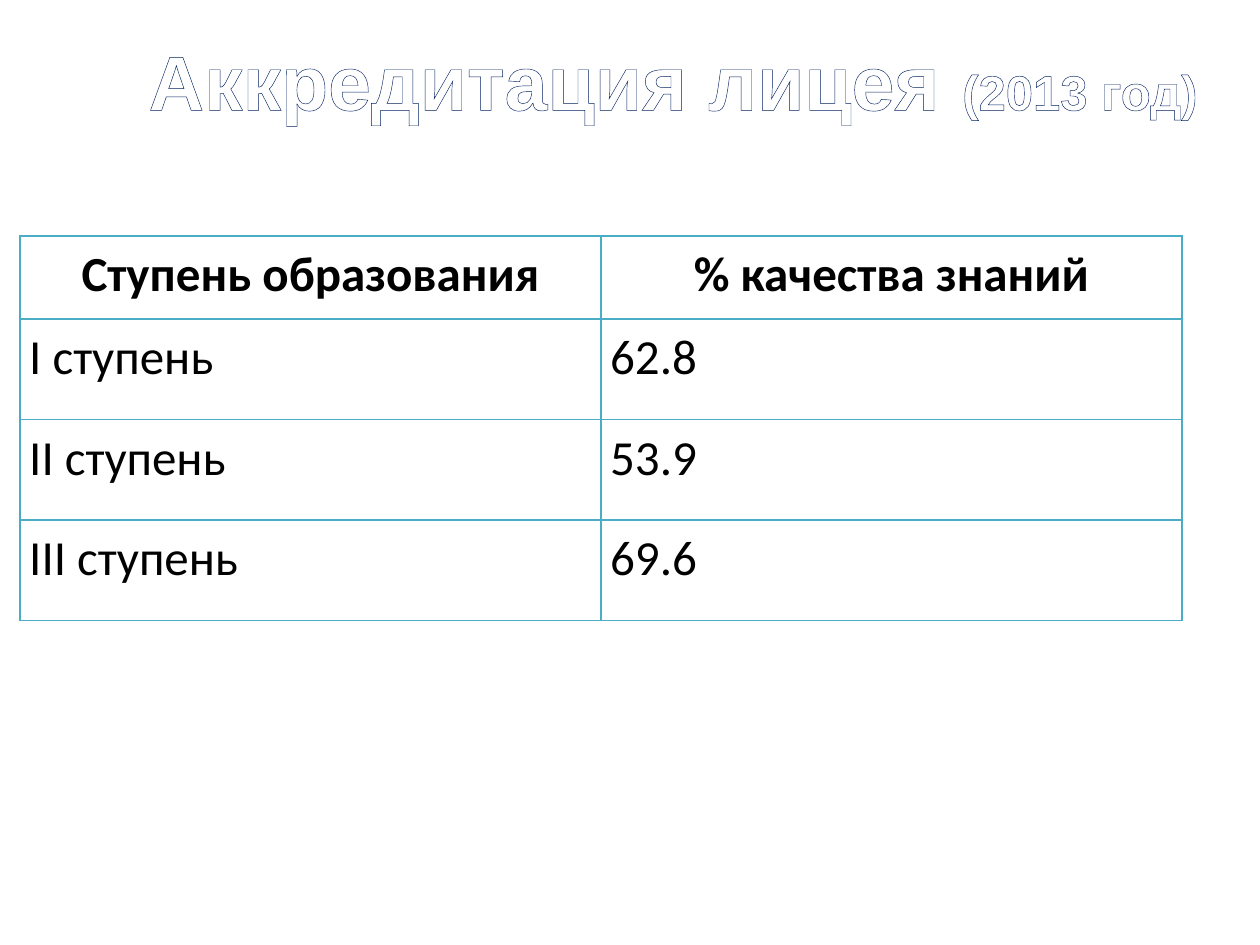
from lxml import etree
from pptx import Presentation
from pptx import util as u
from pptx.dml.color import RGBColor
from pptx.enum import text
from pptx.oxml import ns

COLORS = {"black": "000000", "white": "FFFFFF", "navy": "002060", "border": "4BACC6"}
ROWS = [
    ("Ступень образования", "% качества знаний"),
    ("I ступень", "62.8"),
    ("II ступень", "53.9"),
    ("III ступень", "69.6"),
]
TITLE = [("Аккредитация лицея ", 44), ("(2013 год)", 28)]


def style_run(run, font_name, size, color, bold):
    run.font.name = font_name
    run.font.size = u.Pt(size)
    run.font.bold = bold
    run.font.color.rgb = RGBColor.from_string(COLORS[color])


def make_line(tag, color, width):
    line = etree.Element(ns.qn(tag), w=str(u.Pt(width)))
    fill = etree.SubElement(line, ns.qn("a:solidFill"))
    etree.SubElement(fill, ns.qn("a:srgbClr"), val=COLORS[color])
    return line


def add_title(slide):
    shape = slide.shapes.add_textbox(u.Pt(77.8), u.Pt(11.5), u.Pt(622), u.Pt(90))
    frame = shape.text_frame
    frame.word_wrap = True
    frame.margin_top = u.Pt(7.6)
    paragraph = frame.paragraphs[0]
    for words, size in TITLE:
        run = paragraph.add_run()
        run.text = words
        style_run(run, "Arial", size, "white", True)
        run.font._element.insert(0, make_line("a:ln", "navy", 0.5))


def fill_cell(cell, words, is_header):
    cell.fill.background()
    cell.margin_left = cell.margin_right = u.Pt(5.4)
    cell.margin_top = cell.margin_bottom = u.Pt(0)
    cell.text_frame.text = words
    paragraph = cell.text_frame.paragraphs[0]
    paragraph.alignment = text.PP_ALIGN.CENTER if is_header else text.PP_ALIGN.JUSTIFY
    paragraph.line_spacing = 1.15
    paragraph.space_after = u.Pt(10)
    style_run(paragraph.runs[0], "Calibri", 28, "black", is_header)
    properties = cell._tc.get_or_add_tcPr()
    for index, side in enumerate(("L", "R", "T", "B")):
        properties.insert(index, make_line(f"a:ln{side}", "border", 1))


def add_grades_table(slide):
    heights = [47.6] + [57.4] * (len(ROWS) - 1)
    frame = slide.shapes.add_table(
        len(ROWS), 2, u.Pt(11.3), u.Pt(134.8), u.Pt(664), u.Pt(sum(heights)))
    table = frame.table
    table.first_row = table.horz_banding = False
    for row_index, words in enumerate(ROWS):
        table.rows[row_index].height = u.Pt(heights[row_index])
        for column_index, value in enumerate(words):
            fill_cell(table.cell(row_index, column_index), value, row_index == 0)


def main():
    """Build the slide with the lyceum accreditation results."""
    presentation = Presentation()
    presentation.slide_width, presentation.slide_height = u.Pt(720), u.Pt(540)
    slide = presentation.slides.add_slide(presentation.slide_layouts[6])
    add_grades_table(slide)
    add_title(slide)
    presentation.save("out.pptx")


if __name__ == "__main__":
    main()
